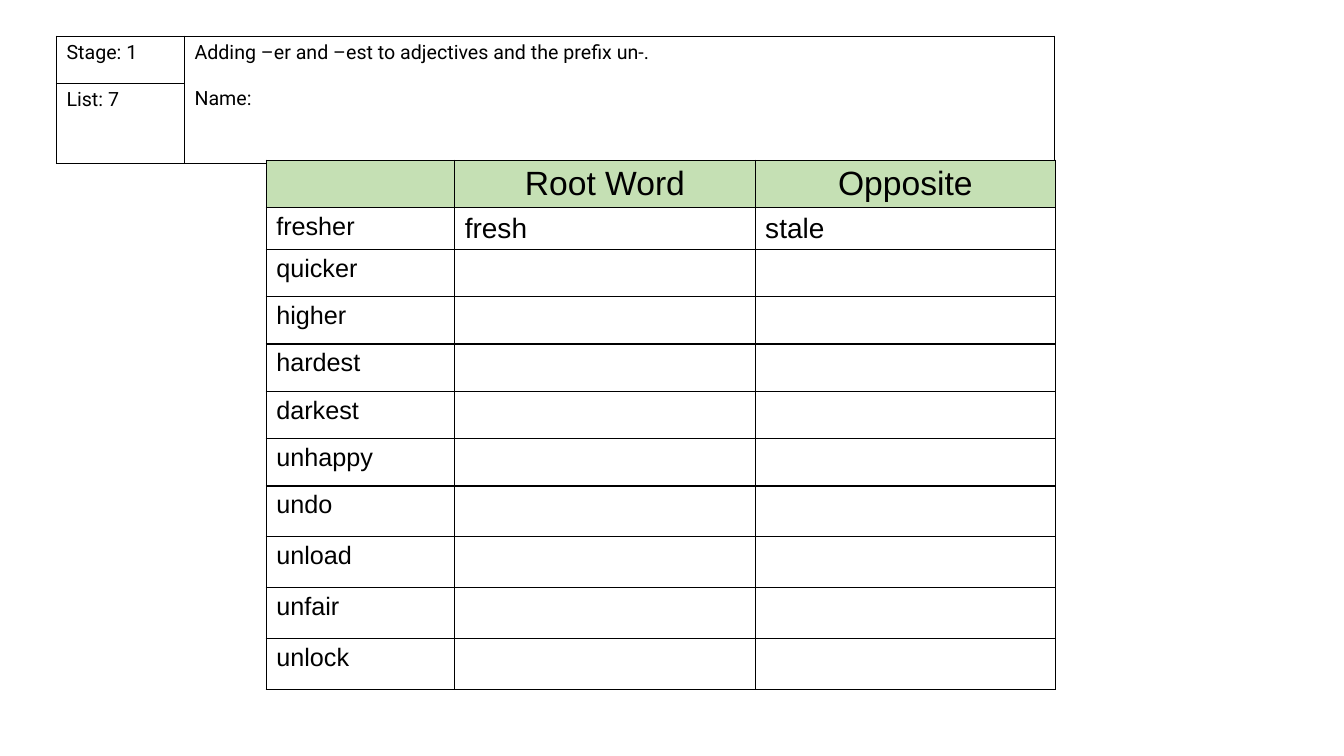
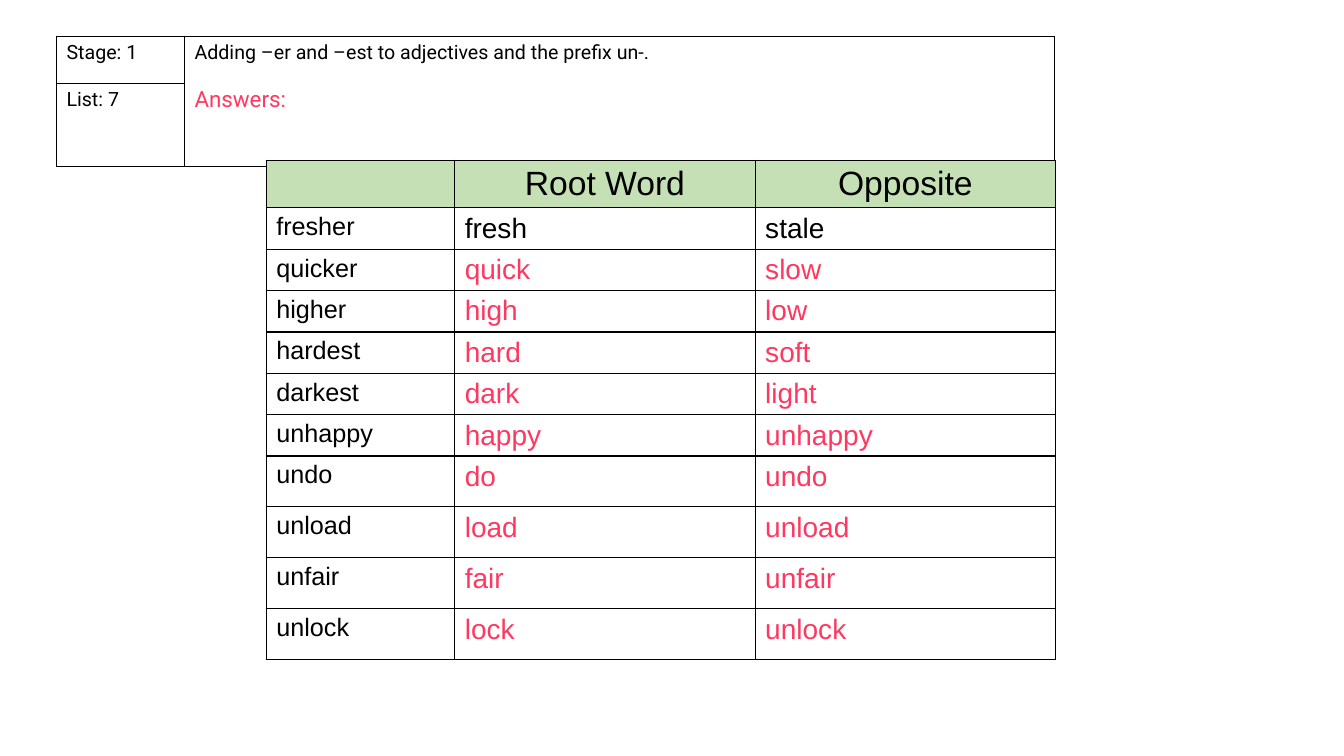
from lxml import etree
from pptx import Presentation
from pptx.dml.color import RGBColor
from pptx.enum.text import PP_ALIGN
from pptx.oxml.ns import qn
from pptx.util import Inches, Pt

CENTER, LEFT = PP_ALIGN.CENTER, PP_ALIGN.LEFT
BLACK = RGBColor(0x00, 0x00, 0x00)
ANSWER_PINK = RGBColor(0xFF, 0x38, 0x60)
HEADING_GREEN = RGBColor(0xC5, 0xE0, 0xB4)

STAGE, LIST = "Stage: 1", "List: 7"
TOPIC = "Adding –er and –est to adjectives and the prefix un-."
HEADINGS = ("", "Root Word", "Opposite")
EXAMPLE = ("fresher", "fresh", "stale")
WORDS = [
    ("quicker", "quick", "slow"),
    ("higher", "high", "low"),
    ("hardest", "hard", "soft"),
    ("darkest", "dark", "light"),
    ("unhappy", "happy", "unhappy"),
    ("undo", "do", "undo"),
    ("unload", "load", "unload"),
    ("unfair", "fair", "unfair"),
    ("unlock", "lock", "unlock"),
]

INFO_TEXT = {"name": "Roboto", "size": Pt(14), "color": BLACK}
HEADING_TEXT = {"name": "Arial", "size": Pt(24), "color": BLACK}
WORD_TEXT = {**HEADING_TEXT, "size": Pt(18)}
EXAMPLE_TEXT = {**HEADING_TEXT, "size": Pt(20)}
ANSWER_TEXT = {**EXAMPLE_TEXT, "color": ANSWER_PINK}

PAGES = [
    {"label": "Name:", "label_text": INFO_TEXT, "answers": False,
     "list_row": 0.79, "short_row": 0.47},
    {"label": "Answers:", "label_text": {**INFO_TEXT, "size": Pt(16), "color": ANSWER_PINK},
     "answers": True, "list_row": 0.82, "short_row": 0.41},
]

INFO_AT, INFO_COLUMNS = (0.56, 0.36), (1.27, 8.63)
WORDS_AT, WORDS_COLUMNS = (2.64, 1.59), (1.87, 2.98, 2.98)
TITLE_ROW, EXAMPLE_ROW, TALL_ROW = 0.47, 0.41, 0.505
SHORT_COUNT = 5


def add_grid(slide, at, columns, rows):
    box = [Inches(v) for v in (*at, sum(columns), sum(rows))]
    grid = slide.shapes.add_table(len(rows), len(columns), *box).table
    grid.first_row = grid.horz_banding = False
    for column, width in zip(grid.columns, columns):
        column.width = Inches(width)
    for row, height in zip(grid.rows, rows):
        row.height = Inches(height)
    for cell in grid.iter_cells():
        properties = cell._tc.get_or_add_tcPr()
        for side in ("a:lnL", "a:lnR", "a:lnT", "a:lnB"):
            border = etree.SubElement(properties, qn(side), w=str(Pt(1)))
            fill = etree.SubElement(border, qn("a:solidFill"))
            etree.SubElement(fill, qn("a:srgbClr"), val=str(BLACK))
        cell.fill.background()
    return grid


def write(paragraph, text, style, align=LEFT):
    paragraph.alignment = align
    if not text:
        return
    font = paragraph.add_run().font
    paragraph.runs[0].text = text
    for key, value in style.items():
        if key == "color":
            font.color.rgb = value
        else:
            setattr(font, key, value)


def add_info(slide, page):
    info = add_grid(slide, INFO_AT, INFO_COLUMNS, (TITLE_ROW, page["list_row"]))
    topic = info.cell(0, 1)
    topic.merge(info.cell(1, 1))
    for cell, text in ((info.cell(0, 0), STAGE), (info.cell(1, 0), LIST), (topic, TOPIC)):
        write(cell.text_frame.paragraphs[0], text, INFO_TEXT)
    label = topic.text_frame.add_paragraph()
    label.space_before = Pt(16)
    write(label, page["label"], page["label_text"])


def add_words(slide, page):
    short_rows = [page["short_row"]] * SHORT_COUNT
    tall_rows = [TALL_ROW] * (len(WORDS) - SHORT_COUNT)
    words = add_grid(slide, WORDS_AT, WORDS_COLUMNS,
                     [TITLE_ROW, EXAMPLE_ROW, *short_rows, *tall_rows])
    for column, heading in enumerate(HEADINGS):
        cell = words.cell(0, column)
        cell.fill.solid()
        cell.fill.fore_color.rgb = HEADING_GREEN
        write(cell.text_frame.paragraphs[0], heading, HEADING_TEXT, CENTER)
    for row, entry in enumerate([EXAMPLE, *WORDS], start=1):
        solution = EXAMPLE_TEXT if entry is EXAMPLE else ANSWER_TEXT
        shown = entry if entry is EXAMPLE or page["answers"] else entry[:1]
        for column, text in enumerate(shown):
            write(words.cell(row, column).text_frame.paragraphs[0], text,
                  solution if column else WORD_TEXT)


def main():
    deck = Presentation()
    deck.slide_width, deck.slide_height = Inches(13.33), Inches(7.5)
    for page in PAGES:
        slide = deck.slides.add_slide(deck.slide_layouts[6])
        add_info(slide, page)
        add_words(slide, page)
    deck.save("out.pptx")


if __name__ == "__main__":
    main()
